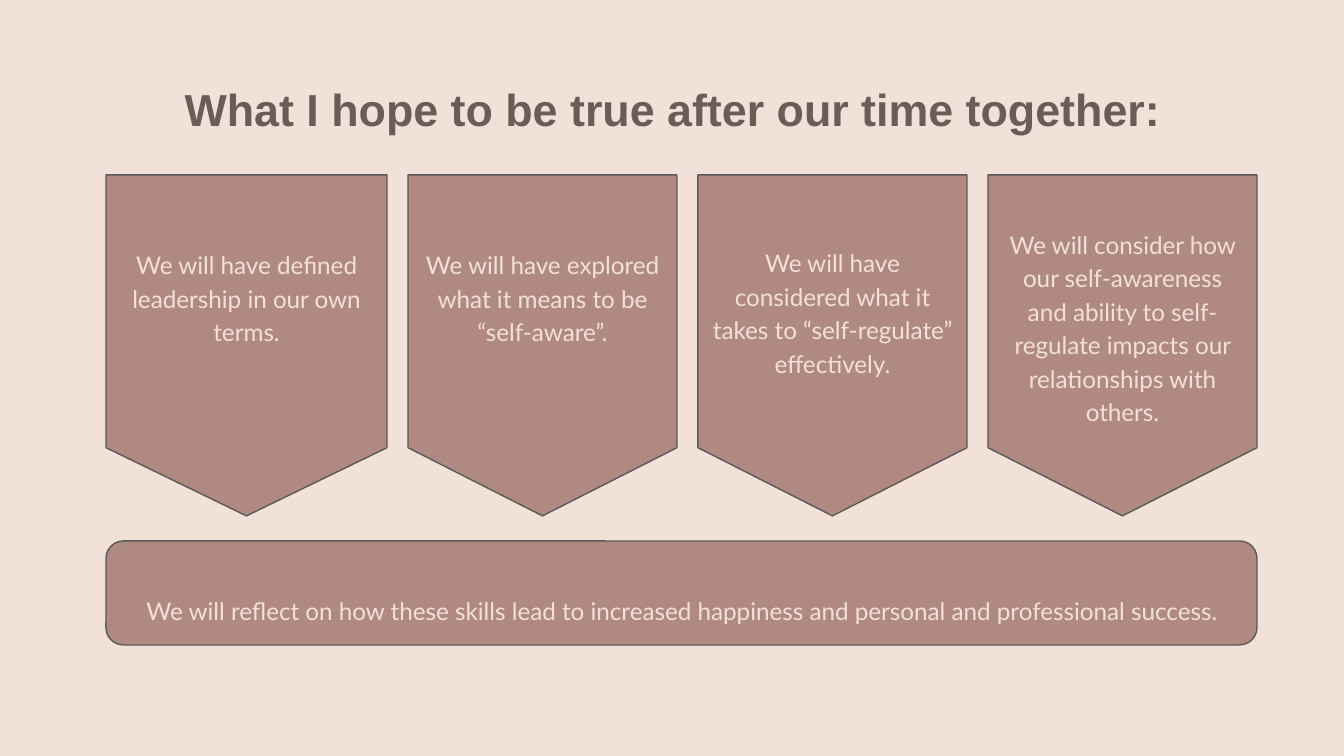
from pptx import Presentation
from pptx.dml.color import RGBColor
from pptx.enum.shapes import MSO_SHAPE as Shape
from pptx.enum.text import MSO_ANCHOR as Anchor, PP_ALIGN as Align
from pptx.util import Pt

SCALE = 9144000 / 1344
PAPER, CLAY, UMBER, OUTLINE = "F2E1D8", "B08980", "6D5B57", "595959"
INSET = 13
TITLE = "What I hope to be true after our time together:"
GOALS = [
    ("We will have defined leadership in our own terms.", 281, -15),
    ("We will have explored what it means to be “self-aware”.", 269, -15),
    ("We will have considered what it takes to “self-regulate” effectively.", 269, 0),
    ("We will consider how our self-awareness and ability to self-regulate "
     "impacts our relationships with others.", 269, 15),
]
SUMMARY = ("We will reflect on how these skills lead to increased happiness "
           "and personal and professional success.")


def px(length):
    """Turn px into EMU."""
    return round(length * SCALE)


def color(value):
    """Turn a hex string into a colour."""
    return RGBColor.from_string(value)


def write(box, text, font="Lato", size=13, tint=PAPER, bold=False, spacing=1.15, shift=0):
    """Write centred text in a box, moved down from its middle by shift px."""
    frame = box.text_frame
    frame.word_wrap = True
    frame.vertical_anchor = Anchor.MIDDLE
    frame.margin_left = frame.margin_right = px(INSET)
    frame.margin_top = px(INSET + max(2 * shift, 0))
    frame.margin_bottom = px(INSET + max(-2 * shift, 0))
    para = frame.paragraphs[0]
    para.alignment = Align.CENTER
    para.line_spacing = spacing
    span = para.add_run()
    span.text = text
    span.font.name = font
    span.font.size = Pt(size)
    span.font.bold = bold
    span.font.color.rgb = color(tint)


def add_panel(page, kind, left, top, width, height):
    """Add a filled and outlined shape."""
    panel = page.shapes.add_shape(kind, px(left), px(top), px(width), px(height))
    panel.shadow.inherit = False
    panel.fill.solid()
    panel.fill.fore_color.rgb = color(CLAY)
    panel.line.color.rgb = color(OUTLINE)
    panel.line.width = Pt(0.75)
    return panel


def add_title(page, left, top, width, height):
    """Add the heading."""
    box = page.shapes.add_textbox(px(left), px(top), px(width), px(height))
    write(box, TITLE, font="Arial", size=24, tint=UMBER, bold=True, spacing=1)


def add_goals(page, left, top, height, gap=21):
    """Add the row of goal pennants, each starting one gap after the last."""
    for text, width, shift in GOALS:
        pennant = add_panel(page, Shape.FLOWCHART_OFFPAGE_CONNECTOR, left, top, width, height)
        write(pennant, text, shift=shift)
        left += width + gap


def add_summary(page, left, top, width, height):
    """Add the closing bar."""
    bar = add_panel(page, Shape.ROUNDED_RECTANGLE, left, top, width, height)
    write(bar, SUMMARY, shift=16)


def main():
    """Build and save the slide."""
    deck = Presentation()
    deck.slide_width, deck.slide_height = px(1344), px(756)
    page = deck.slides.add_slide(deck.slide_layouts[6])
    page.background.fill.solid()
    page.background.fill.fore_color.rgb = color(PAPER)
    add_title(page, 106, 66, 1133, 85)
    add_goals(page, 106, 175, 341)
    add_summary(page, 106, 541, 1151, 104)
    deck.save("out.pptx")


if __name__ == "__main__":
    main()
